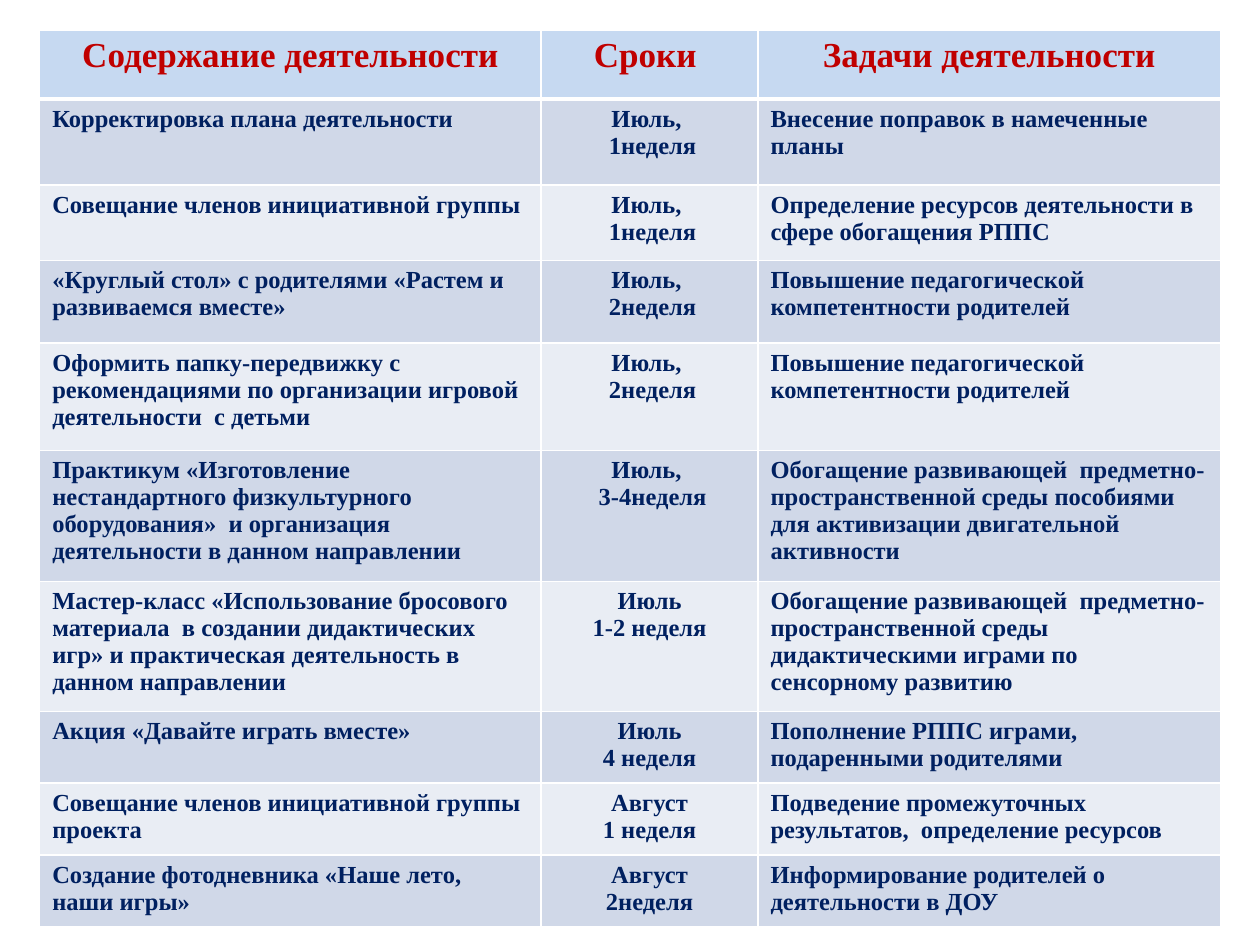
from lxml import etree
from pptx import Presentation
from pptx import util as u
from pptx.dml.color import RGBColor
from pptx.enum import text
from pptx.oxml import ns

HEAD = ["Содержание деятельности", "Сроки ", "Задачи деятельности"]
# Row height in cm, activity, dates, aims
PLAN = [
    (1.73, "Корректировка плана деятельности", "Июль, \n 1неделя",
     "Внесение поправок в намеченные планы"),
    (1.52, "Совещание членов инициативной группы", "Июль, \n 1неделя",
     "Определение ресурсов деятельности в сфере обогащения РППС"),
    (1.67, "«Круглый стол» с родителями «Растем и развиваемся вместе»",
     "Июль, \n 2неделя",
     "Повышение педагогической компетентности родителей"),
    (2.16, "Оформить папку-передвижку с рекомендациями по организации "
     "игровой деятельности  с детьми", "Июль, \n 2неделя",
     "Повышение педагогической компетентности родителей"),
    (2.64, "Практикум «Изготовление нестандартного физкультурного "
     "оборудования»  и организация деятельности в данном направлении",
     "Июль, \n 3-4неделя",
     "Обогащение развивающей  предметно-пространственной среды пособиями "
     "для активизации двигательной активности"),
    (2.62, "Мастер-класс «Использование бросового материала  в создании "
     "дидактических игр» и практическая деятельность в данном направлении",
     "Июль\n1-2 неделя",
     "Обогащение развивающей  предметно-пространственной среды "
     "дидактическими играми по сенсорному развитию"),
    (1.45, "Акция «Давайте играть вместе»", "Июль\n4 неделя",
     "Пополнение РППС играми, подаренными родителями"),
    (1.45, "Совещание членов инициативной группы проекта",
     "Август\n1 неделя",
     "Подведение промежуточных результатов,  определение ресурсов"),
    (1.45, "Создание фотодневника «Наше лето, наши игры»",
     "Август\n2неделя", "Информирование родителей о деятельности в ДОУ"),
]


def color(code):
    return RGBColor.from_string(code)


class Deck:
    font = "Times New Roman"
    line = "FFFFFF"
    bands = ["D0D8E8", "E9EDF4"]

    def __init__(self, wide, high):
        self.prs = Presentation()
        self.prs.slide_width = u.Cm(wide)
        self.prs.slide_height = u.Cm(high)
        self.slide = self.prs.slides.add_slide(self.prs.slide_layouts[6])

    def border(self, cell, top, bottom):
        """Draw the four sides; top and bottom are widths in points."""
        props = cell._tc.get_or_add_tcPr()
        sides = {"lnL": 1, "lnR": 1, "lnT": top, "lnB": bottom}
        for spot, (side, width) in enumerate(sides.items()):
            edge = etree.Element(ns.qn("a:" + side), w=str(u.Pt(width)))
            fill = etree.SubElement(edge, ns.qn("a:solidFill"))
            etree.SubElement(fill, ns.qn("a:srgbClr"), val=self.line)
            props.insert(spot, edge)

    def cell(self, cell, words, fill, ink, size, center):
        cell.fill.solid()
        cell.fill.fore_color.rgb = color(fill)
        frame = cell.text_frame
        for i, part in enumerate(words.split("\n")):
            para = frame.add_paragraph() if i else frame.paragraphs[0]
            if center:
                para.alignment = text.PP_ALIGN.CENTER
            run = para.add_run()
            run.text = part
            run.font.name = self.font
            run.font.size = u.Pt(size)
            run.font.bold = True
            run.font.color.rgb = color(ink)

    def table(self, left, top, widths, heights, rows):
        frame = self.slide.shapes.add_table(
            len(rows), len(widths), u.Cm(left), u.Cm(top),
            u.Cm(sum(widths)), u.Cm(sum(heights)))
        grid = frame.table
        for col, width in zip(grid.columns, widths):
            col.width = u.Cm(width)
        for r, (row, high) in enumerate(zip(rows, heights)):
            grid.rows[r].height = u.Cm(high)
            for c, words in enumerate(row):
                cell = grid.cell(r, c)
                if r == 0:
                    self.cell(cell, words, "C6D9F1", "C00000", 20, True)
                else:
                    band = self.bands[(r - 1) % 2]
                    self.cell(cell, words, band, "002060", 14, c == 1)
                self.border(cell, 3 if r == 1 else 1, 3 if r == 0 else 1)


def main():
    deck = Deck(25.4, 19.05)
    heights = [1.4] + [row[0] for row in PLAN]
    rows = [HEAD] + [row[1:] for row in PLAN]
    deck.table(0.8, 0.6, [10.11, 4.37, 9.32], heights, rows)
    deck.prs.save("out.pptx")


if __name__ == "__main__":
    main()
